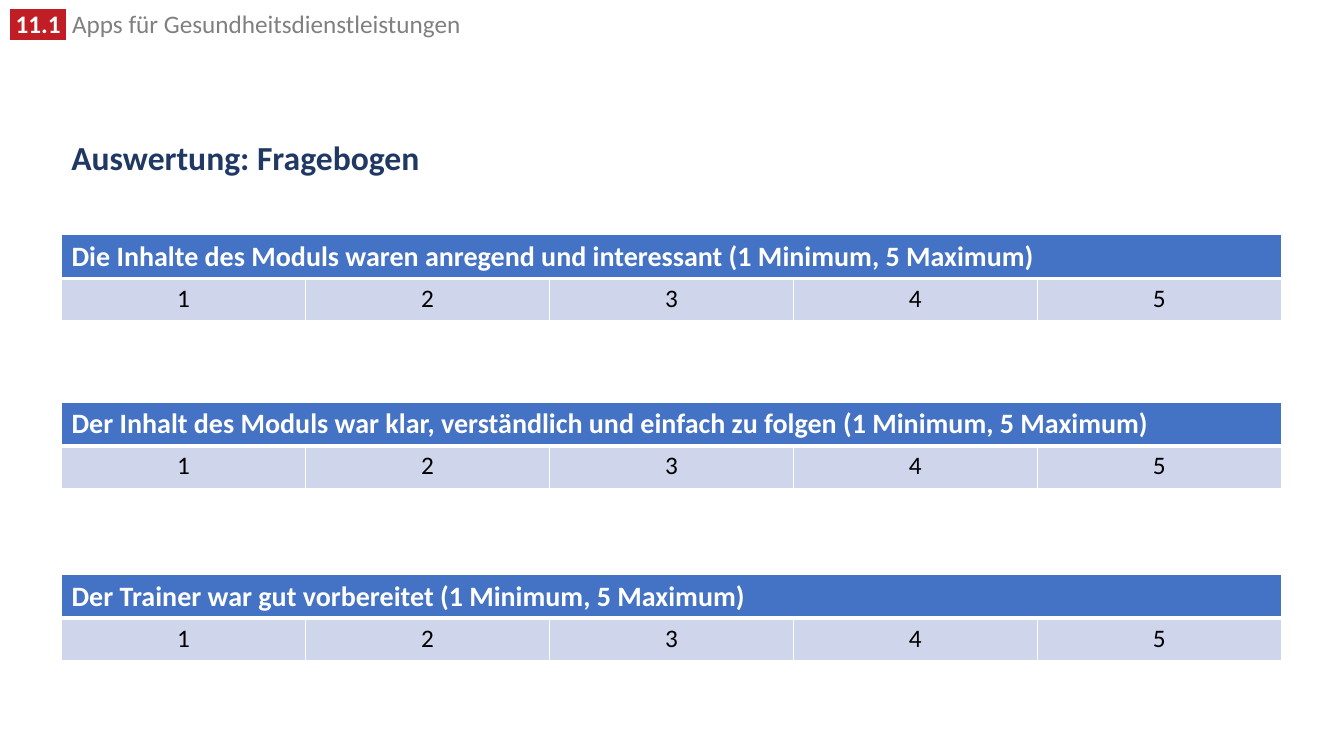
from lxml import etree
from pptx import Presentation
from pptx.dml.color import RGBColor
from pptx.enum.text import MSO_ANCHOR, PP_ALIGN
from pptx.oxml.ns import qn
from pptx.util import Inches, Pt

MIDDLE = MSO_ANCHOR.MIDDLE
LEFT, CENTER = PP_ALIGN.LEFT, PP_ALIGN.CENTER

COLORS = {
    "white": "FFFFFF",
    "black": "000000",
    "red": "C01E24",
    "gray": "808080",
    "navy": "203864",
    "blue": "4472C4",
    "pale": "CFD5EA",
}

HEADING = {"size": Pt(20), "bold": True}
RATING = {"size": Pt(18), "bold": False}
QUESTIONS = [
    (2.33, "Die Inhalte des Moduls waren anregend und interessant (1 Minimum, 5 Maximum)"),
    (3.99, "Der Inhalt des Moduls war klar, verständlich und einfach zu folgen (1 Minimum, 5 Maximum)"),
    (5.7, "Der Trainer war gut vorbereitet (1 Minimum, 5 Maximum)"),
]
RATINGS = 5


def add_span(para, text, color, style):
    span = para.add_run()
    span.text = text
    span.font.name = "Calibri"
    span.font.color.rgb = RGBColor.from_string(COLORS[color])
    for name, value in style.items():
        setattr(span.font, name, value)
    return span


def fill_cell(cell, text, fill, color, align, style, top, bottom):
    properties = cell._tc.get_or_add_tcPr()
    for side, width in {"lnL": 1, "lnR": 1, "lnT": top, "lnB": bottom}.items():
        line = etree.SubElement(properties, qn(f"a:{side}"), w=str(Pt(width)))
        solid = etree.SubElement(line, qn("a:solidFill"))
        etree.SubElement(solid, qn("a:srgbClr"), val=COLORS["white"])
    cell.fill.solid()
    cell.fill.fore_color.rgb = RGBColor.from_string(COLORS[fill])
    para = cell.text_frame.paragraphs[0]
    para.alignment = align
    if text:
        add_span(para, text, color, style)


deck = Presentation()
deck.slide_width = Inches(13.33)
deck.slide_height = Inches(7.5)
page = deck.slides.add_slide(deck.slide_layouts[6])

header = page.shapes.add_textbox(Inches(0), Inches(0.09), Inches(7.52), Inches(0.35))
header.text_frame.word_wrap = True
para = header.text_frame.paragraphs[0]
para.line_spacing = 0.8
number = add_span(para, " 11.1 ", "white", {"size": Pt(18), "bold": True})
highlight = etree.Element(qn("a:highlight"))
etree.SubElement(highlight, qn("a:srgbClr"), val=COLORS["red"])
number.font._element.find(qn("a:solidFill")).addnext(highlight)
add_span(para, " Apps für Gesundheitsdienstleistungen", "gray", {"size": Pt(18), "bold": False})

title = page.shapes.add_textbox(Inches(0.61), Inches(1.18), Inches(12.1), Inches(0.8))
title.text_frame.word_wrap = True
title.text_frame.vertical_anchor = MIDDLE
para = title.text_frame.paragraphs[0]
para.line_spacing = 0.9
add_span(para, "Auswertung: Fragebogen", "navy", {"size": Pt(24), "bold": True})

for top, question in QUESTIONS:
    frame = page.shapes.add_table(2, RATINGS, Inches(0.61), Inches(top), Inches(12.1), Inches(0.84))
    table = frame.table
    table.cell(0, 0).merge(table.cell(0, RATINGS - 1))
    for index in range(RATINGS):
        text = question if index == 0 else ""
        fill_cell(table.cell(0, index), text, "blue", "white", LEFT, HEADING, 1, 3)
        fill_cell(table.cell(1, index), str(index + 1), "pale", "black", CENTER, RATING, 3, 1)

deck.save("out.pptx")
